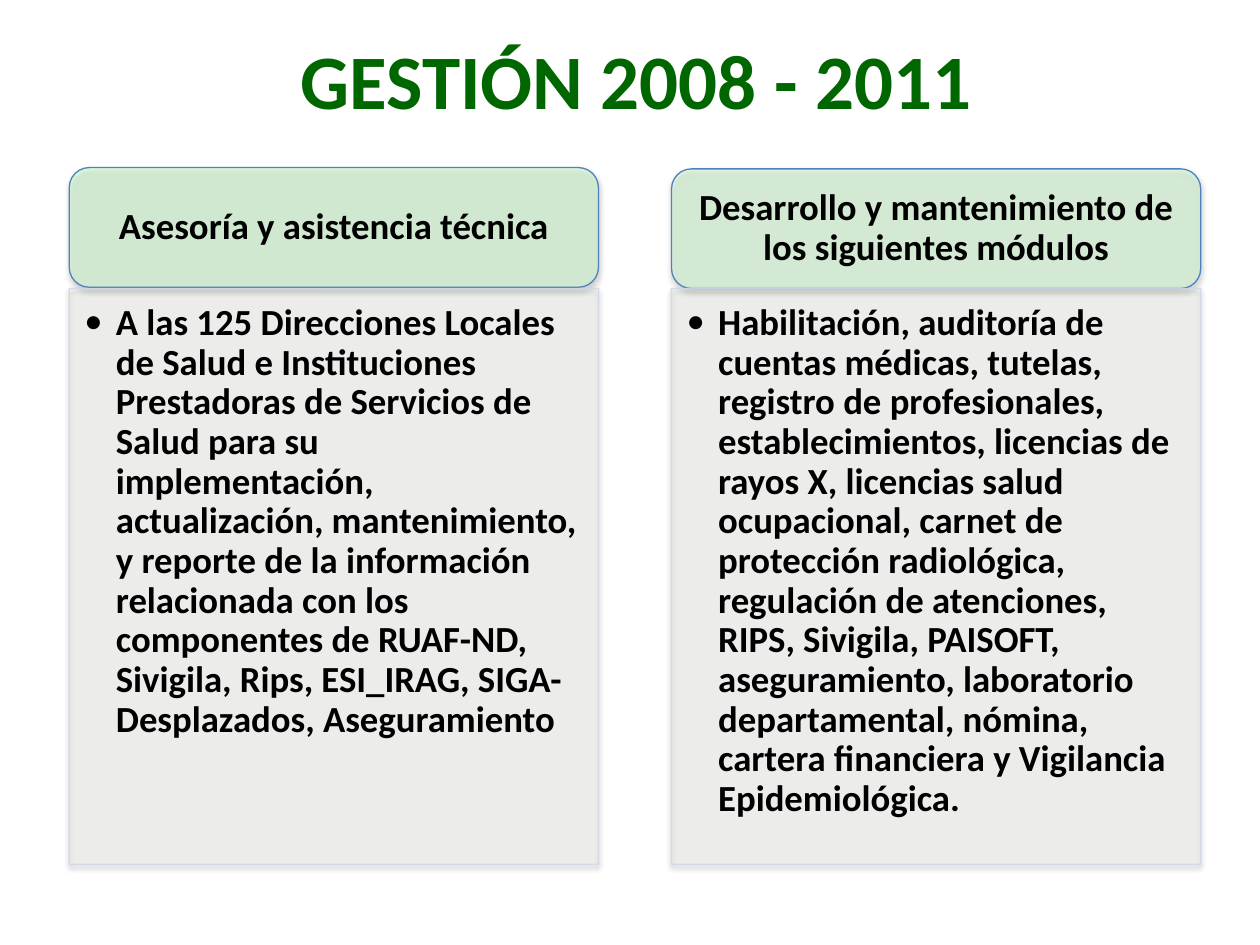
from dataclasses import dataclass

from lxml.etree import SubElement
from pptx import Presentation
from pptx.dml.color import RGBColor
from pptx.enum.shapes import MSO_SHAPE as Shape
from pptx.enum.text import MSO_ANCHOR as Anchor, PP_ALIGN as Align
from pptx.oxml.ns import qn
from pptx.util import Inches, Pt

TITLE_GREEN = RGBColor(0x00, 0x66, 0x00)
HEADER_FILL = RGBColor(0xCC, 0xFF, 0xCC)
HEADER_LINE = RGBColor(0x4F, 0x81, 0xBD)
BODY_FILL = RGBColor(0xEB, 0xF1, 0xDE)
BODY_LINE = RGBColor(0xD0, 0xD8, 0xE8)
BLACK = RGBColor(0x00, 0x00, 0x00)

COLUMN_WIDTH = 4.2
HEADER_HEIGHT = 0.95
BODY_TOP, BODY_HEIGHT = 2.29, 4.57


@dataclass
class Column:
    left: float
    header_top: float
    header_opacity: int
    header: str
    body: str


@dataclass
class BoxStyle:
    geometry: Shape
    fill: RGBColor
    line: RGBColor
    line_opacity: int
    anchor: Anchor
    align: Align
    margins: tuple[float, float, float, float]
    bulleted: bool


HEADER = BoxStyle(Shape.ROUNDED_RECTANGLE, HEADER_FILL, HEADER_LINE, 100,
                  Anchor.MIDDLE, Align.CENTER, (0.16, 0.09, 0.16, 0.09), False)
BODY = BoxStyle(Shape.RECTANGLE, BODY_FILL, BODY_LINE, 90,
                Anchor.TOP, Align.LEFT, (0.12, 0.12, 0.16, 0.18), True)

COLUMNS = [
    Column(0.55, 1.33, 47, "Asesoría y asistencia técnica",
           "A las 125 Direcciones Locales de Salud e Instituciones Prestadoras de "
           "Servicios de Salud para su implementación, actualización, mantenimiento, "
           "y reporte de la información relacionada con los componentes de RUAF-ND, "
           "Sivigila, Rips, ESI_IRAG, SIGA- Desplazados, Aseguramiento"),
    Column(5.33, 1.34, 42, "Desarrollo y mantenimiento de los siguientes módulos",
           "Habilitación, auditoría de cuentas médicas, tutelas, registro de "
           "profesionales, establecimientos, licencias de rayos X, licencias salud "
           "ocupacional, carnet de protección radiológica, regulación de atenciones, "
           "RIPS, Sivigila, PAISOFT, aseguramiento, laboratorio departamental, nómina, "
           "cartera financiera y Vigilancia Epidemiológica."),
]


def set_font(font, size: float, color: RGBColor) -> None:
    for name, value in {"name": "Calibri", "size": Pt(size), "bold": True}.items():
        setattr(font, name, value)
    font.color.rgb = color


def set_opacity(color_parent, percent: int) -> None:
    color = color_parent.find(f"{qn('a:solidFill')}/{qn('a:srgbClr')}")
    SubElement(color, qn("a:alpha"), val=str(percent * 1000))


def add_shadow(shape) -> None:
    shape.shadow.inherit = False
    effects = shape._element.spPr.find(qn("a:effectLst"))
    shadow = SubElement(effects, qn("a:outerShdw"), blurRad=str(Pt(3.1)),
                        dist=str(Pt(1.8)), dir="5400000", rotWithShape="0")
    color = SubElement(shadow, qn("a:srgbClr"), val=str(BLACK))
    SubElement(color, qn("a:alpha"), val="35000")


def add_bullet(paragraph) -> None:
    properties = paragraph._p.get_or_add_pPr()
    properties.set("marL", str(Inches(0.25)))
    properties.set("indent", str(Inches(-0.25)))
    SubElement(properties, qn("a:buFont"), typeface="Calibri")
    SubElement(properties, qn("a:buChar"), char="•")


def add_box(slide, style: BoxStyle, left: float, top: float, height: float,
            opacity: int, text: str) -> None:
    place = [Inches(value) for value in (left, top, COLUMN_WIDTH, height)]

    # Translucent panel
    shape = slide.shapes.add_shape(style.geometry, *place)
    shape.fill.solid()
    shape.fill.fore_color.rgb = style.fill
    set_opacity(shape._element.spPr, opacity)
    shape.line.color.rgb = style.line
    shape.line.width = Pt(0.75)
    set_opacity(shape.line._ln, style.line_opacity)
    add_shadow(shape)

    # Separate text box, so that the panel's shadow does not reach the letters
    frame = slide.shapes.add_textbox(*place).text_frame
    frame.word_wrap = True
    frame.vertical_anchor = style.anchor
    for side, margin in zip(("left", "top", "right", "bottom"), style.margins):
        setattr(frame, f"margin_{side}", Inches(margin))
    paragraph = frame.paragraphs[0]
    paragraph.text = text
    if style.bulleted:
        add_bullet(paragraph)
    paragraph.alignment = style.align
    paragraph.line_spacing = 0.9
    set_font(paragraph.runs[0].font, 21, BLACK)


def add_title(slide, text: str) -> None:
    title = slide.shapes.title
    title.left, title.top = Inches(0.55), Inches(0)
    title.width, title.height = Inches(9), Inches(1.25)
    title.text_frame.vertical_anchor = Anchor.MIDDLE
    paragraph = title.text_frame.paragraphs[0]
    paragraph.text = text
    paragraph.alignment = Align.CENTER
    set_font(paragraph.runs[0].font, 44, TITLE_GREEN)


def main() -> None:
    presentation = Presentation()
    presentation.slide_width, presentation.slide_height = Inches(10), Inches(7.5)
    slide = presentation.slides.add_slide(presentation.slide_layouts[5])

    add_title(slide, "GESTIÓN 2008 - 2011")
    for column in COLUMNS:
        add_box(slide, HEADER, column.left, column.header_top, HEADER_HEIGHT,
                column.header_opacity, column.header)
        add_box(slide, BODY, column.left, BODY_TOP, BODY_HEIGHT, 20, column.body)

    presentation.save("out.pptx")


if __name__ == "__main__":
    main()
